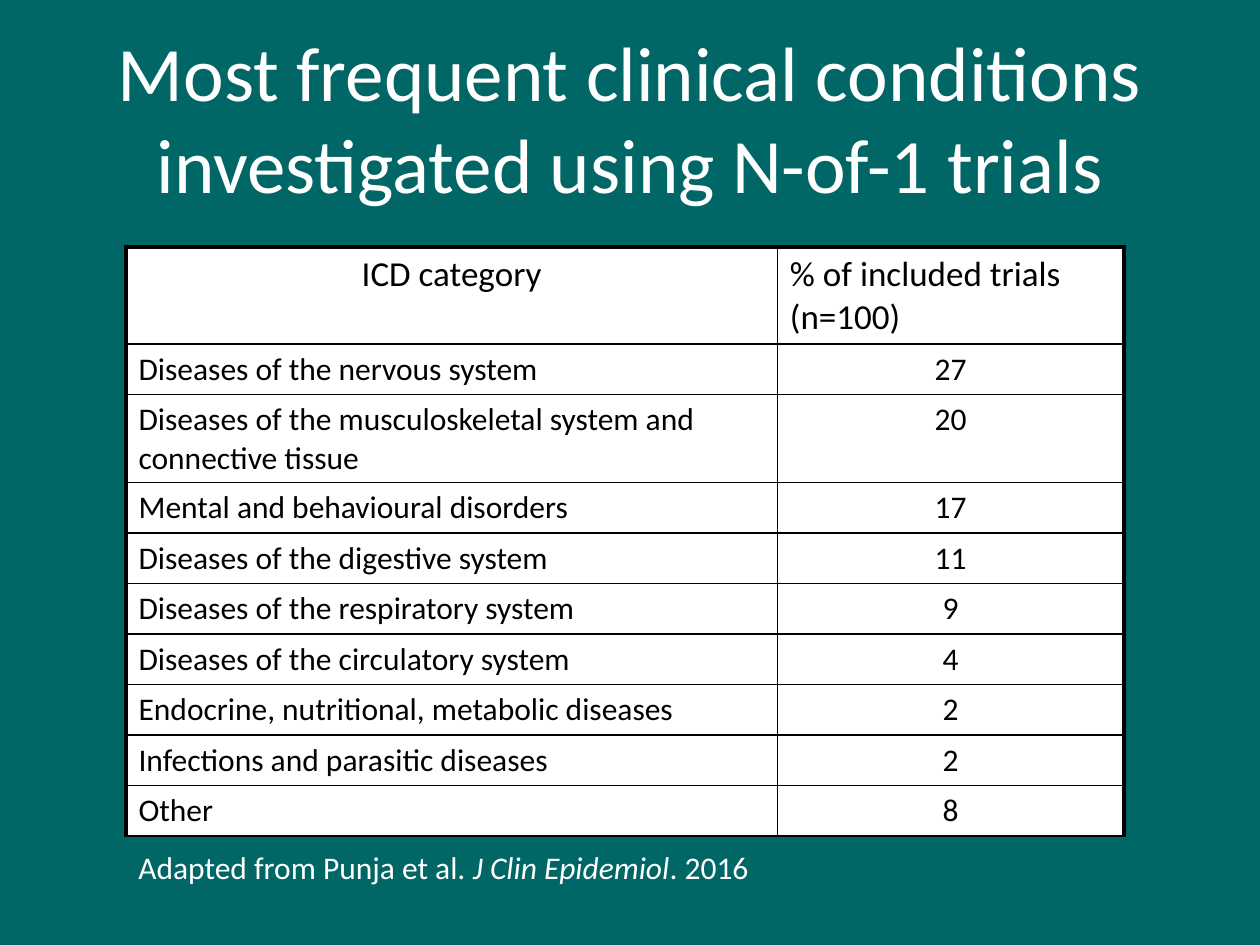
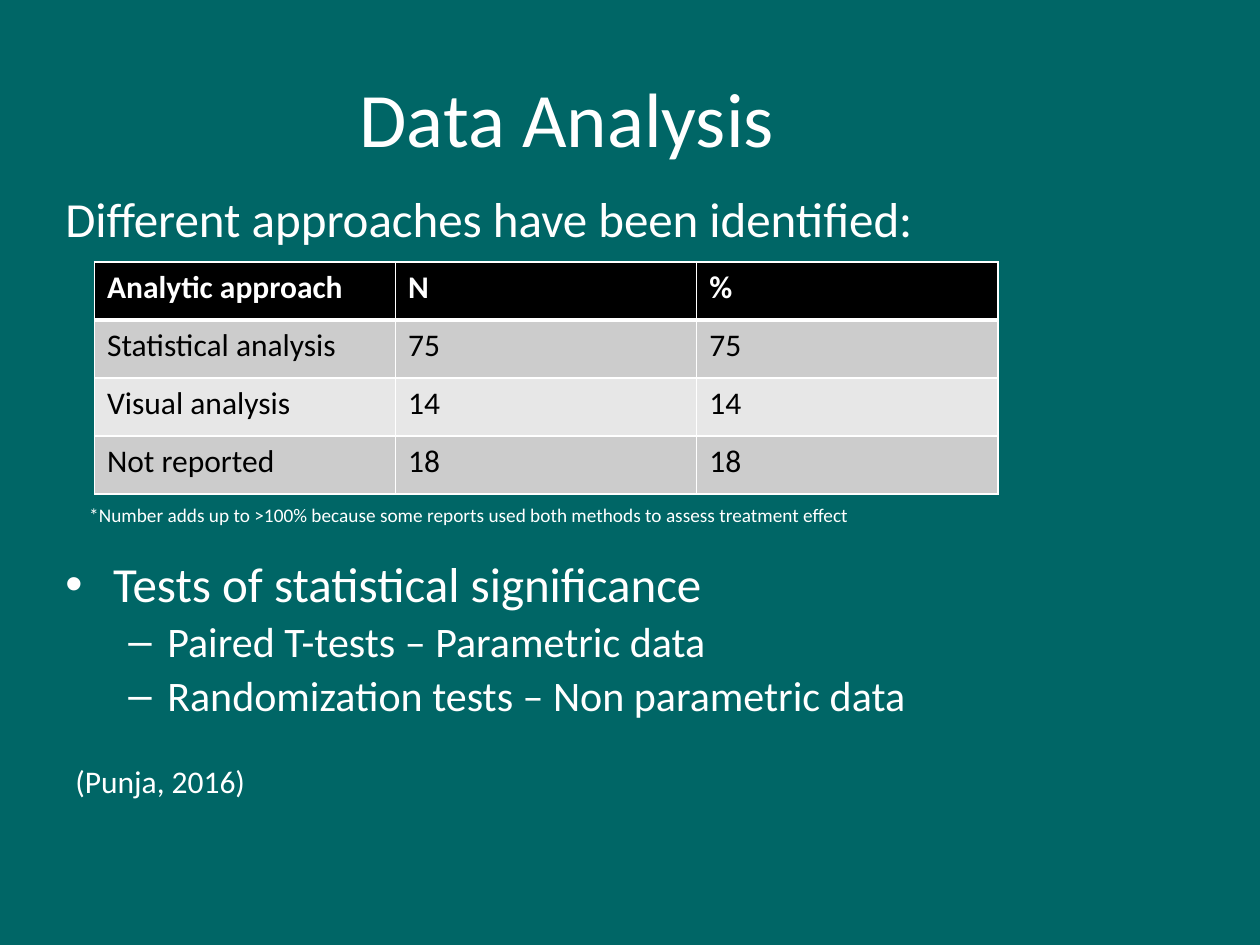
from lxml.etree import SubElement as Sub
from pptx import Presentation
from pptx.dml.color import RGBColor
from pptx.enum.text import MSO_ANCHOR as Anchor, PP_ALIGN as Align
from pptx.oxml.ns import qn
from pptx.util import Inches, Pt

# Content
ICD_HEAD = ("ICD category", "% of included trials (n=100)")
ICD = [
    ("Diseases of the nervous system", 27),
    ("Diseases of the musculoskeletal system and connective tissue", 20),
    ("Mental and behavioural disorders", 17),
    ("Diseases of the digestive system", 11),
    ("Diseases of the respiratory system", 9),
    ("Diseases of the circulatory system", 4),
    ("Endocrine, nutritional, metabolic diseases", 2),
    ("Infections and parasitic diseases", 2),
    ("Other", 8),
]
CREDIT = ("Adapted from Punja et al. ", "J Clin Epidemiol", ". 2016")
METHODS = [
    ("Analytic approach", "N", "%"),
    ("Statistical analysis", 75, 75),
    ("Visual analysis", 14, 14),
    ("Not reported", 18, 18),
]
DASH = dict(size=24, left=0.81, hang=0.31, mark="–", before=4.8)
POINTS = [
    ("Different approaches have been identified:", dict(size=28)),
    ("*Number adds up to >100% because some reports used both methods "
     "to assess treatment effect", dict(size=11, left=0.19, before=147)),
    ("Tests of statistical significance",
     dict(size=28, left=0.38, hang=0.38, mark="•", before=19.2)),
    ("Paired T-tests – Parametric data", DASH),
    ("Randomization tests – Non parametric data", DASH),
]

# Shared look
FONT = "Calibri"
TEAL, WHITE, BLACK = "006666", "FFFFFF", "000000"
BANDS = ("CCCCCC", "E7E7E7")
WIDE, HIGH = 10, 7.5


def paint(fill, tint):
    fill.solid()
    fill.fore_color.rgb = RGBColor.from_string(tint)


def write(para, text, size=18, tint=WHITE, bold=False, align=Align.LEFT,
          before=0, line=None, left=0, hang=0, mark=None):
    """Fill a paragraph; in a tuple of runs every second one is italic."""
    para.alignment = align
    para.space_before = Pt(before)
    if line:
        para.line_spacing = line
    props = para._p.get_or_add_pPr()
    props.set("marL", str(Inches(left)))
    props.set("indent", str(-Inches(hang)))
    if mark:
        Sub(props, qn("a:buFont"), typeface="Arial")
        Sub(props, qn("a:buChar"), char=mark)
    for i, part in enumerate(text if isinstance(text, tuple) else (text,)):
        run = para.add_run()
        run.text = str(part)
        font = run.font
        font.name, font.size, font.bold = FONT, Pt(size), bold
        font.italic = i % 2 == 1
        paint(font.fill, tint)


def add_box(slide, place, anchor=Anchor.TOP):
    frame = slide.shapes.add_textbox(*map(Inches, place)).text_frame
    frame.word_wrap = True
    frame.vertical_anchor = anchor
    return frame


def add_title(slide, text, wide):
    frame = add_box(slide, (0, 0.3, wide, 1.25), Anchor.MIDDLE)
    write(frame.paragraphs[0], text, size=44, align=Align.CENTER)


def edge(cell, tint, widths):
    """Draw the left, right, top and bottom borders, widths in points."""
    props = cell._tc.get_or_add_tcPr()
    for i, (side, width) in enumerate(zip("LRTB", widths)):
        line = Sub(props, qn("a:ln" + side), w=str(Pt(width)))
        Sub(Sub(line, qn("a:solidFill")), qn("a:srgbClr"), val=tint)
        props.insert(i, line)


def add_grid(slide, place, rows, cols, highs, style):
    """Build a table; style gives fill, border tint, widths, text format."""
    table = slide.shapes.add_table(
        len(rows), len(cols), *map(Inches, (*place, sum(cols), sum(highs)))).table
    table.first_row = table.horz_banding = False
    for col, wide in zip(table.columns, cols):
        col.width = Inches(wide)
    for r, row in enumerate(rows):
        table.rows[r].height = Inches(highs[r])
        for c, text in enumerate(row):
            cell = table.cell(r, c)
            fill, tint, widths, form = style(r, c)
            paint(cell.fill, fill)
            edge(cell, tint, widths)
            write(cell.text_frame.paragraphs[0], text, **form)


def icd_style(r, c):
    widths = (1 if c else 2.25, 2.25 if c else 1, 1 if r else 2.25, 1)
    mid = (r == 0) != (c == 1)
    form = dict(size=18 if r else 20, tint=BLACK,
                align=Align.CENTER if mid else Align.LEFT)
    return WHITE, BLACK, widths, form


def method_style(r, c):
    if r == 0:
        return BLACK, WHITE, (1, 1, 1, 3), dict(bold=True)
    return BANDS[(r - 1) % 2], WHITE, (1, 1, 3 if r == 1 else 1, 1), dict(tint=BLACK)


def icd_slide(slide):
    add_title(slide, "Most frequent clinical conditions "
              "investigated using N-of-1 trials", WIDE)
    highs = [0.77] + [0.7 if len(name) > 50 else 0.4 for name, _ in ICD]
    add_grid(slide, (1, 1.96), [ICD_HEAD] + ICD, (5.17, 2.75), highs, icd_style)
    write(add_box(slide, (1, 6.68, 7.58, 0.4)).paragraphs[0], CREDIT)


def data_slide(slide):
    add_title(slide, "Data Analysis", 9)
    frame = add_box(slide, (0.42, 1.5, 9, 4.65))
    for i, (text, form) in enumerate(POINTS):
        para = frame.add_paragraph() if i else frame.paragraphs[0]
        write(para, text, line=0.9, **form)
    write(add_box(slide, (0.5, 6, 1.57, 0.4)).paragraphs[0], "(Punja, 2016)")
    add_grid(slide, (0.75, 2.08), METHODS, [2.39] * 3,
             [0.46] * len(METHODS), method_style)


def main():
    deck = Presentation()
    deck.slide_width, deck.slide_height = Inches(WIDE), Inches(HIGH)
    paint(deck.slide_master.background.fill, TEAL)
    for build in (icd_slide, data_slide):
        build(deck.slides.add_slide(deck.slide_layouts[6]))
    deck.save("out.pptx")


if __name__ == "__main__":
    main()
